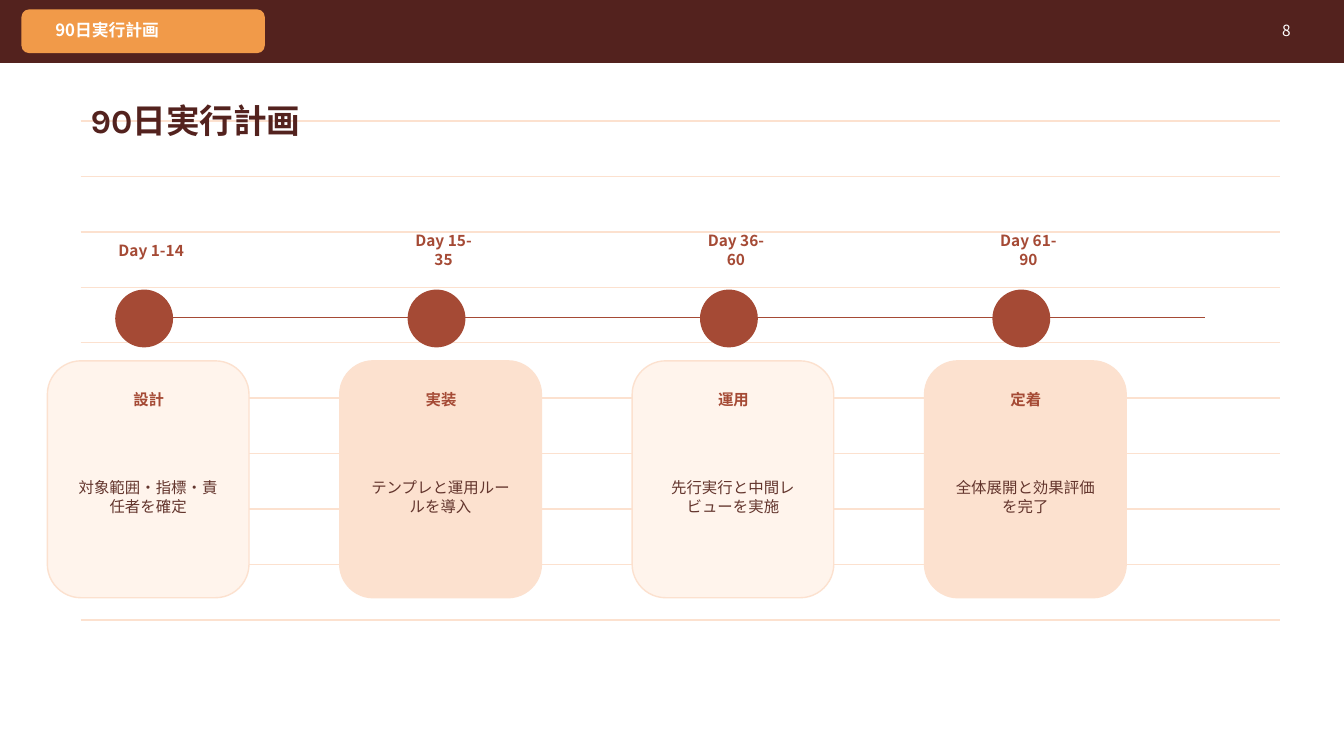
from lxml import etree
from pptx import Presentation, util as u
from pptx.dml.color import RGBColor
from pptx.enum import shapes, text
from pptx.oxml.ns import qn

# Content
HEADING = "90日実行計画"
PAGE_NUMBER = "8"
PHASES = [
    ("Day 1-14", "設計", "対象範囲・指標・責任者を確定"),
    ("Day 15-35", "実装", "テンプレと運用ルールを導入"),
    ("Day 36-60", "運用", "先行実行と中間レビューを実施"),
    ("Day 61-90", "定着", "全体展開と効果評価を完了"),
]

# Format
WIDTH, HEIGHT = 13.33, 7.5
DARK, ORANGE, RUST, BROWN = "53221E", "F19A49", "A54A35", "63352D"
PEACH, CREAM, WHITE = "FCE1CF", "FFF4EC", "FFFFFF"
JAPANESE = "Noto Sans CJK JP"
LEFT, CENTER, RIGHT = text.PP_ALIGN.LEFT, text.PP_ALIGN.CENTER, text.PP_ALIGN.RIGHT
TITLE = dict(name="Karla", size=u.Pt(24), bold=True)
TAB = dict(name=JAPANESE, size=u.Pt(12), bold=True)
LABEL = dict(name=JAPANESE, size=u.Pt(11), bold=True)
BODY = dict(name=JAPANESE, size=u.Pt(11), bold=False)

# Grid
RULE_TOP, RULE_STEP, RULE_COUNT = 1.2, 0.55, 10
PHASE_LEFT, PHASE_STEP = 0.47, 2.9

presentation = Presentation()
presentation.slide_width, presentation.slide_height = u.Inches(WIDTH), u.Inches(HEIGHT)
slide = presentation.slides.add_slide(presentation.slide_layouts[5])


def color(value):
    return RGBColor.from_string(value)


def box(left, top, width, height):
    return [u.Inches(length) for length in (left, top, width, height)]


def add_line(left, right, y, line_color):
    line = slide.shapes.add_connector(
        shapes.MSO_CONNECTOR.STRAIGHT, *box(left, y, right, y))
    line.line.color.rgb = color(line_color)
    line.line.width = u.Pt(1)
    etree.SubElement(line._element.spPr, qn("a:effectLst"))


def add_panel(kind, place, fill, line_color):
    shape = slide.shapes.add_shape(kind, *box(*place))
    shape.shadow.inherit = False
    shape.fill.solid()
    shape.fill.fore_color.rgb = color(fill)
    shape.line.color.rgb = color(line_color)
    shape.line.width = u.Pt(1)


def write(shape, words, font_color, style, align=LEFT):
    frame = shape.text_frame
    frame.text = words
    frame.word_wrap = True
    frame.auto_size = text.MSO_AUTO_SIZE.NONE
    frame.vertical_anchor = text.MSO_ANCHOR.MIDDLE
    paragraph = frame.paragraphs[0]
    paragraph.alignment = align
    font = paragraph.runs[0].font
    for name, value in style.items():
        setattr(font, name, value)
    font.color.rgb = color(font_color)
    east_asian = etree.SubElement(font._element, qn("a:ea"))
    east_asian.set("typeface", style["name"])


def add_text(place, *args):
    write(slide.shapes.add_textbox(*box(*place)), *args)


# Ruled background
for row in range(RULE_COUNT):
    add_line(0.8, 12.7, RULE_TOP + row * RULE_STEP, PEACH)

# Header band
RECTANGLE = shapes.MSO_SHAPE.RECTANGLE
ROUNDED = shapes.MSO_SHAPE.ROUNDED_RECTANGLE
add_panel(RECTANGLE, (0, 0, WIDTH, 0.62), DARK, DARK)
add_panel(ROUNDED, (0.22, 0.1, 2.4, 0.42), ORANGE, ORANGE)
add_text((0.45, 0.18, 8.8, 0.24), HEADING, WHITE, TAB)
add_text((12.15, 0.18, 0.75, 0.24), PAGE_NUMBER, WHITE, BODY, RIGHT)

# Title, brought in front of the ruled lines
title = slide.shapes.title
title.left, title.top, title.width, title.height = box(0.8, 0.95, 11.4, 0.48)
write(title, HEADING, DARK, TITLE)
slide.shapes._spTree.append(title._element)

# Timeline
add_line(1.35, 11.95, 3.15, RUST)
for column, (days, phase, task) in enumerate(PHASES):
    left = PHASE_LEFT + column * PHASE_STEP
    add_panel(shapes.MSO_SHAPE.OVAL, (left + 0.68, 2.88, 0.56, 0.56), RUST, RUST)
    add_text((left + 0.58, 2.36, 0.9, 0.24), days, RUST, LABEL, CENTER)
    add_panel(ROUNDED, (left, 3.58, 2, 2.35), (CREAM, PEACH)[column % 2], PEACH)
    add_text((left + 0.23, 3.85, 1.55, 0.22), phase, RUST, LABEL, CENTER)
    add_text((left + 0.14, 4.18, 1.72, 1.5), task, BROWN, BODY, CENTER)

presentation.save("out.pptx")
